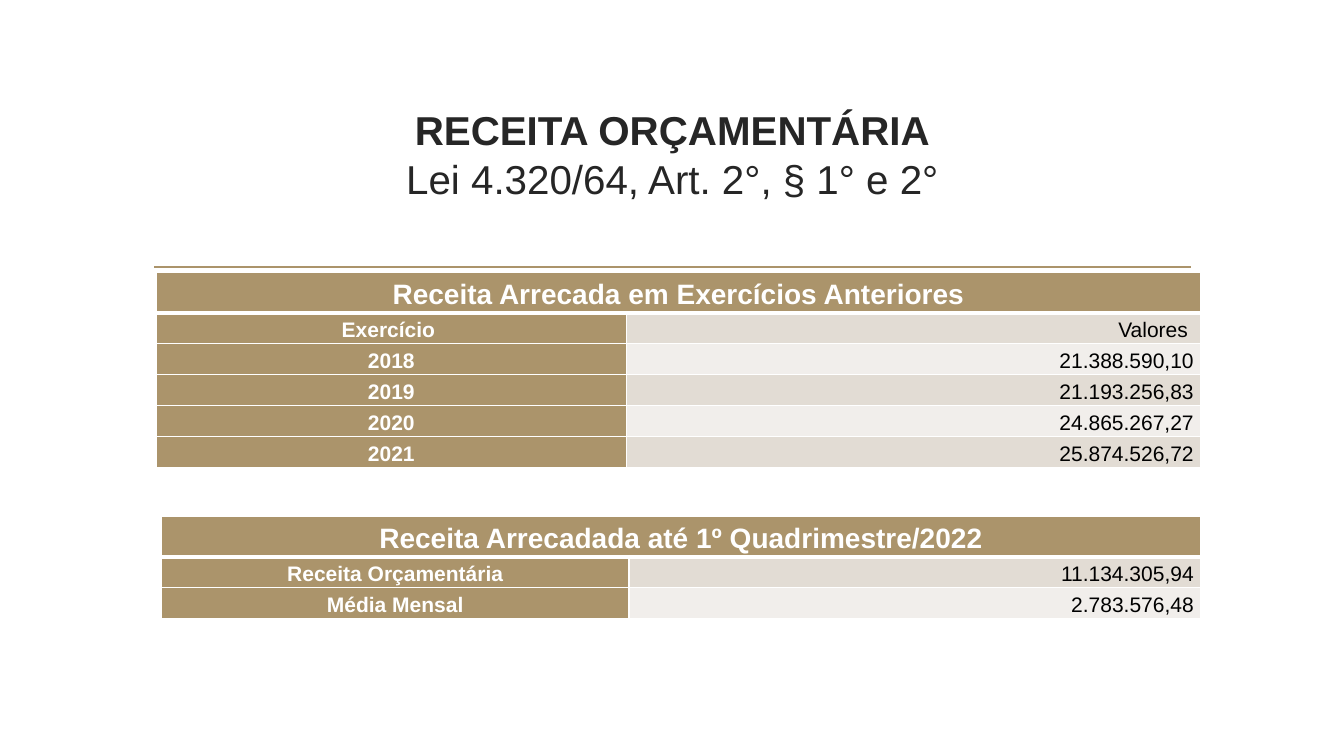
import pptx
import pptx.util
import pptx.dml.color
import pptx.enum.shapes
import pptx.enum.text
import pptx.oxml
import pptx.oxml.ns

Inches = pptx.util.Inches
Pt = pptx.util.Pt
ALIGN = pptx.enum.text.PP_ALIGN
MIDDLE = pptx.enum.text.MSO_ANCHOR.MIDDLE
COLORS = {
    "gold": "AB946B",
    "odd": "E2DCD4",
    "even": "F1EEEB",
    "white": "FFFFFF",
    "black": "000000",
    "title": "262626",
}
HEADING_HEIGHT = 0.39
ROW_HEIGHT = 0.29
LABEL_SHARE = 0.45

PRIOR_YEARS = [
    ("Exercício ", "Valores "),
    ("2018", "21.388.590,10"),
    ("2019", "21.193.256,83"),
    ("2020", "24.865.267,27"),
    ("2021", "25.874.526,72"),
]
CURRENT_YEAR = [
    ("Receita Orçamentária", "11.134.305,94"),
    ("Média Mensal", "2.783.576,48"),
]


def rgb(name):
    return pptx.dml.color.RGBColor.from_string(COLORS[name])


def style_paragraph(paragraph, size, color, bold, align, spacing):
    paragraph.alignment = align
    paragraph.line_spacing = spacing
    for run in paragraph.runs:
        run.font.name = "Arial"
        run.font.size = Pt(size)
        run.font.bold = bold
        run.font.color.rgb = rgb(color)


def add_title(slide, left, top, width, height):
    title = slide.shapes.add_textbox(
        Inches(left), Inches(top), Inches(width), Inches(height))
    frame = title.text_frame
    frame.word_wrap = True
    frame.vertical_anchor = MIDDLE
    frame.margin_bottom = Inches(0.57)
    frame.text = "RECEITA ORÇAMENTÁRIA\nLei 4.320/64, Art. 2°, § 1° e 2°"
    for paragraph, bold in zip(frame.paragraphs, (True, False)):
        style_paragraph(paragraph, 28.8, "title", bold, ALIGN.CENTER, Pt(35))


def add_rule(slide, left, top, width):
    rule = slide.shapes.add_connector(
        pptx.enum.shapes.MSO_CONNECTOR.STRAIGHT,
        Inches(left), Inches(top), Inches(left + width), Inches(top))
    rule.line.color.rgb = rgb("gold")
    rule.line.width = Pt(1.25)
    rule._element.spPr.append(pptx.oxml.parse_xml(
        f'<a:effectLst {pptx.oxml.ns.nsdecls("a")}/>'))


def set_borders(cell, top, bottom):
    properties = cell._tc.get_or_add_tcPr()
    for side, points in (("L", 1), ("R", 1), ("T", top), ("B", bottom)):
        properties.append(pptx.oxml.parse_xml(
            f'<a:ln{side} {pptx.oxml.ns.nsdecls("a")} w="{Pt(points)}">'
            f'<a:solidFill><a:srgbClr val="{COLORS["white"]}"/></a:solidFill>'
            f'</a:ln{side}>'))


def fill_cell(cell, text, fill, size, color, bold, align):
    cell.fill.solid()
    cell.fill.fore_color.rgb = rgb(fill)
    cell.vertical_anchor = MIDDLE
    cell.margin_left = cell.margin_right = Inches(0.07)
    cell.margin_top = cell.margin_bottom = Inches(0.01)
    cell.text = text
    style_paragraph(cell.text_frame.paragraphs[0], size, color, bold, align, 1.15)


def add_revenue_table(slide, left, top, width, heading, entries):
    height = HEADING_HEIGHT + ROW_HEIGHT * len(entries)
    table = slide.shapes.add_table(
        len(entries) + 1, 2,
        Inches(left), Inches(top), Inches(width), Inches(height)).table
    table.columns[0].width = Inches(width * LABEL_SHARE)
    table.columns[1].width = Inches(width * (1 - LABEL_SHARE))
    for index, row in enumerate(table.rows):
        row.height = Inches(ROW_HEIGHT if index else HEADING_HEIGHT)
        for cell in row.cells:
            set_borders(cell, 3 if index == 1 else 1, 1 if index else 3)

    table.cell(0, 0).merge(table.cell(0, 1))
    fill_cell(table.cell(0, 0), heading, "gold", 20, "white", True, ALIGN.CENTER)
    for index, (label, value) in enumerate(entries, 1):
        band = "odd" if index % 2 else "even"
        fill_cell(table.cell(index, 0), label, "gold", 15, "white", True, ALIGN.CENTER)
        fill_cell(table.cell(index, 1), value, band, 15, "black", False, ALIGN.RIGHT)


def main():
    presentation = pptx.Presentation()
    presentation.slide_width = Inches(13.33)
    presentation.slide_height = Inches(7.5)
    slide = presentation.slides.add_slide(presentation.slide_layouts[6])
    add_rule(slide, 1.53, 2.65, 10.28)
    add_title(slide, 1.42, 1.07, 10.5, 1.43)
    add_revenue_table(slide, 1.55, 2.7, 10.36,
                      "Receita Arrecada em Exercícios Anteriores", PRIOR_YEARS)
    add_revenue_table(slide, 1.6, 5.12, 10.31,
                      "Receita Arrecadada até 1º Quadrimestre/2022", CURRENT_YEAR)
    presentation.save("out.pptx")


if __name__ == "__main__":
    main()
